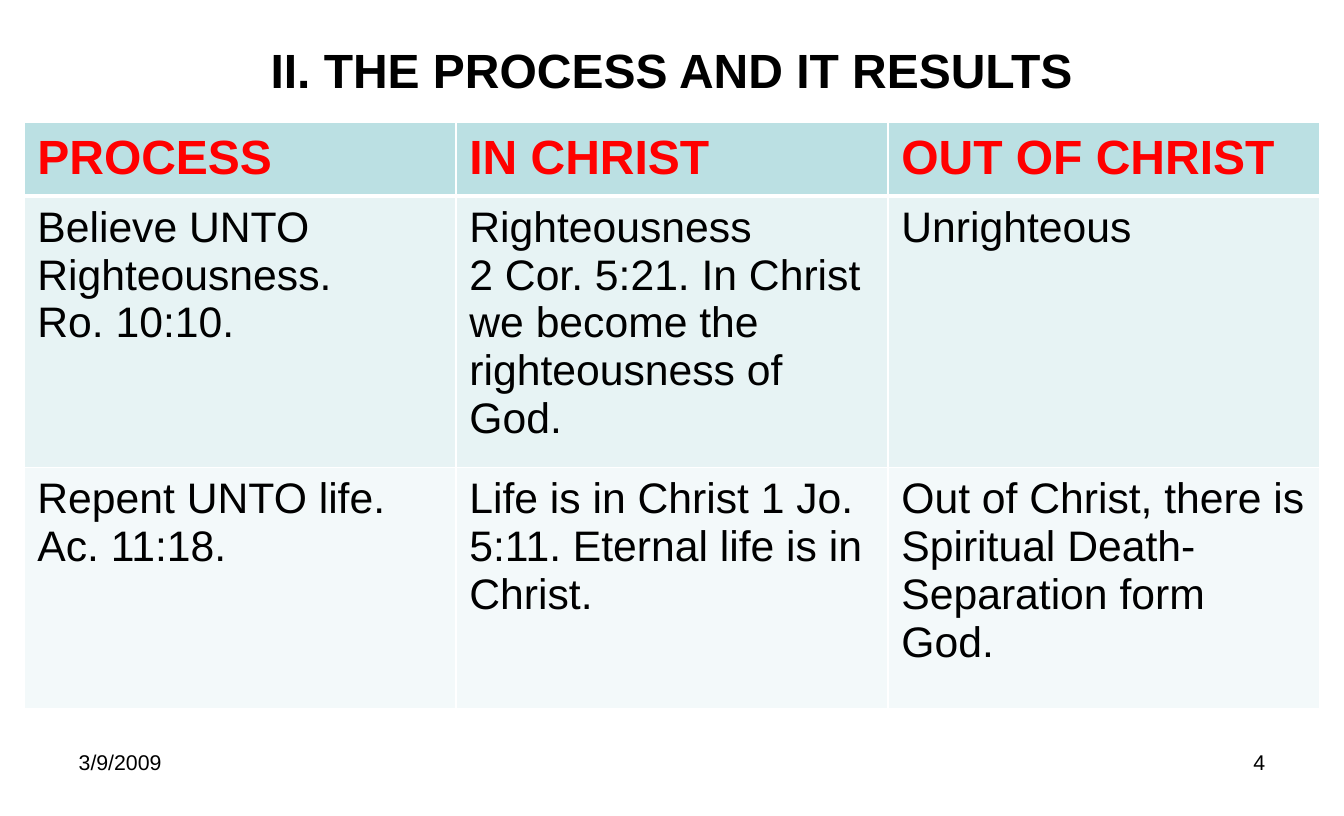
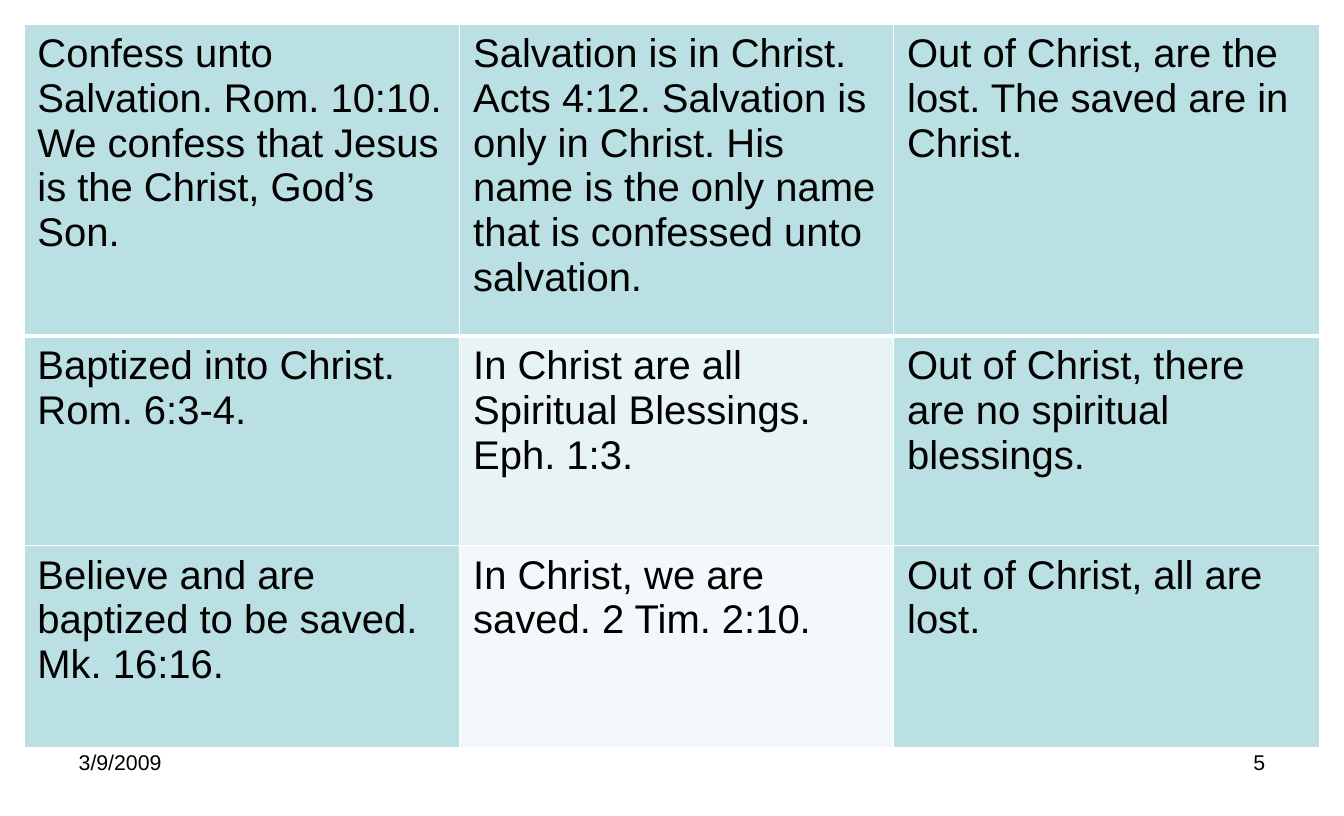
from lxml import etree
from pptx import Presentation, util as u
from pptx.dml.color import RGBColor
from pptx.enum import text as t
from pptx.oxml.ns import qn

WIDE, HIGH = 14, 8.5
EDGE = 0.25
SPAN = WIDE - 2 * EDGE
SIDE = WIDE / 20
INK, RED, WHITE = "000000", "FF0000", "FFFFFF"
DEEP, MID, PALE = "BBE0E3", "E7F3F4", "F3F9FA"
DATE = "3/9/2009"


def color(code):
    return RGBColor.from_string(code)


def write(frame, words, size=16, ink=INK, bold=False, align=t.PP_ALIGN.LEFT):
    frame.word_wrap = True
    for num, line in enumerate(words.split("\n")):
        para = frame.add_paragraph() if num else frame.paragraphs[0]
        para.text = line
        para.alignment = align
        for run in para.runs:
            font = run.font
            font.name, font.size, font.bold = "Arial", u.Pt(size), bold
            font.color.rgb = color(ink)


def label(slide, box, words, anchor=t.MSO_ANCHOR.TOP, **style):
    frame = slide.shapes.add_textbox(*map(u.Inches, box)).text_frame
    frame.margin_left = frame.margin_right = u.Inches(0.12)
    frame.margin_top = frame.margin_bottom = u.Inches(0.06)
    frame.vertical_anchor = anchor
    write(frame, words, **style)


def title(slide, words):
    box = SIDE, 0.34, WIDE - 2 * SIDE, 0.76
    label(slide, box, words, t.MSO_ANCHOR.MIDDLE,
          size=36, bold=True, align=t.PP_ALIGN.CENTER)


def footer(slide, page):
    top, wide, high = 7.74, 3.27, 0.59
    label(slide, (SIDE, top, wide, high), DATE)
    label(slide, (WIDE - SIDE - wide, top, wide, high), str(page),
          align=t.PP_ALIGN.RIGHT)


def border(cell, row):
    props = cell._tc.get_or_add_tcPr()
    thick = {"lnT": 3 if row == 1 else 1, "lnB": 3 if row == 0 else 1}
    for side in ("lnL", "lnR", "lnT", "lnB"):
        line = etree.SubElement(props, qn("a:" + side),
                                w=str(u.Pt(thick.get(side, 1))))
        fill = etree.SubElement(line, qn("a:solidFill"))
        etree.SubElement(fill, qn("a:srgbClr"), val=WHITE)


def grid(slide, top, cols, rows, cells, fills, size, head=None):
    box = EDGE, top, SPAN, sum(rows)
    table = slide.shapes.add_table(
        len(rows), len(cols), *map(u.Inches, box)).table
    table.first_row = table.horz_banding = False
    for col, wide in zip(table.columns, cols):
        col.width = u.Inches(wide)
    for r, high in enumerate(rows):
        table.rows[r].height = u.Inches(high)
        style = head if head and r == 0 else {"size": size}
        for c, words in enumerate(cells[r]):
            cell = table.cell(r, c)
            cell.margin_left = cell.margin_right = u.Inches(0.14)
            cell.margin_top = cell.margin_bottom = u.Inches(0.08)
            border(cell, r)
            cell.fill.solid()
            cell.fill.fore_color.rgb = color(fills[r][c])
            write(cell.text_frame, words, **style)


def process(slide):
    title(slide, "II. THE PROCESS AND IT RESULTS")
    cells = [
        ["PROCESS", "IN CHRIST", "OUT OF CHRIST"],
        ["Believe UNTO Righteousness.\vRo. 10:10.",
         "Righteousness\n2 Cor. 5:21. In Christ we become the "
         "righteousness of God.",
         "Unrighteous"],
        ["Repent UNTO life. Ac. 11:18.",
         "Life is in Christ 1 Jo. 5:11. Eternal life is in Christ.",
         "Out of Christ, there is Spiritual Death-Separation form God."],
    ]
    fills = [[tone] * 3 for tone in (DEEP, MID, PALE)]
    grid(slide, 1.28, [SPAN / 3] * 3, [0.74, 2.72, 2.51], cells, fills, 32,
         head={"size": 36, "ink": RED, "bold": True})
    footer(slide, 4)


def results(slide):
    footer(slide, 5)
    cells = [
        ["Confess unto Salvation. Rom. 10:10. We confess that Jesus is "
         "the Christ, God’s Son.",
         "Salvation is in Christ. Acts 4:12. Salvation is only in Christ. "
         "His name is the only name that is confessed unto salvation.",
         "Out of Christ, are the lost. The saved are in Christ."],
        ["Baptized into Christ. Rom. 6:3-4.",
         "In Christ are all Spiritual Blessings. Eph. 1:3.",
         "Out of Christ, there are no spiritual blessings."],
        ["Believe and are baptized to be saved. Mk. 16:16.",
         "In Christ, we are saved. 2 Tim. 2:10.",
         "Out of Christ, all are lost."],
    ]
    fills = [[DEEP, tone, DEEP] for tone in (DEEP, MID, PALE)]
    grid(slide, EDGE, [4.54, 4.52, 4.44], [3.25, 2.18, 2.11], cells, fills, 30)


def main():
    deck = Presentation()
    deck.slide_width, deck.slide_height = u.Inches(WIDE), u.Inches(HIGH)
    for build in (process, results):
        build(deck.slides.add_slide(deck.slide_layouts[6]))
    deck.save("out.pptx")


if __name__ == "__main__":
    main()
